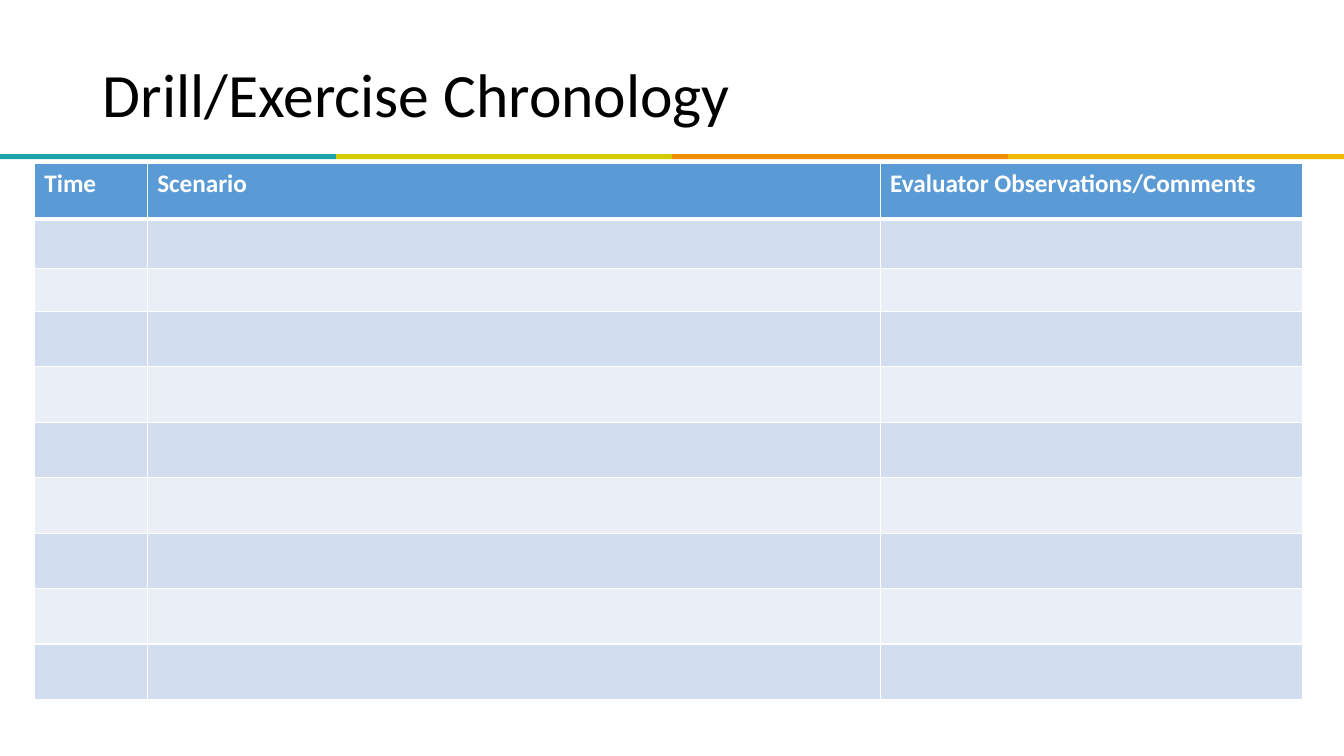
from dataclasses import dataclass

from lxml.etree import SubElement
from pptx import Presentation
from pptx.dml.color import RGBColor
from pptx.dml.fill import FillFormat
from pptx.enum.shapes import MSO_SHAPE as Shape
from pptx.enum.text import MSO_ANCHOR as Anchor, MSO_AUTO_SIZE as AutoSize, PP_ALIGN as Align
from pptx.oxml.ns import qn
from pptx.slide import Slide
from pptx.table import _Cell as Cell
from pptx.text.text import _Paragraph as Paragraph
from pptx.util import Inches, Pt

PAGE_WIDTH, PAGE_HEIGHT = 13.33, 7.5
STRIPE_COLORS = ["1BA3AB", "D3CD00", "EE8E03", "F4B900"]
HEADER_FILL = "5B9BD5"
BAND_FILLS = ["EAEFF7", "D2DEEF"]
ROW_HEIGHTS = [0.55, 0.49, 0.43] + [0.55] * 7
TITLE_FONT = {"name": "Calibri", "size": Pt(44), "bold": False}
HEADER_FONT = {"name": "Calibri", "size": Pt(18), "bold": True}


@dataclass(frozen=True)
class Column:
    heading: str
    width: float


COLUMNS = [
    Column("Time", 1.12),
    Column("Scenario", 7.27),
    Column("Evaluator Observations/Comments", 4.19),
]


def paint(fill: FillFormat, color: str) -> None:
    fill.solid()
    fill.fore_color.rgb = RGBColor.from_string(color)


def write(para: Paragraph, text: str, font: dict, color: str) -> None:
    span = para.add_run()
    span.text = text
    for name, value in font.items():
        setattr(span.font, name, value)
    paint(span.font.fill, color)


def add_stripes(page: Slide) -> None:
    width = PAGE_WIDTH / len(STRIPE_COLORS)
    for index, color in enumerate(STRIPE_COLORS):
        stripe = page.shapes.add_shape(
            Shape.RECTANGLE, Inches(index * width), Inches(1.53), Inches(width), Inches(0.05)
        )
        stripe.shadow.inherit = False
        stripe.line.fill.background()
        paint(stripe.fill, color)


def add_title(page: Slide) -> None:
    title = page.shapes.title
    box = {"left": 0.92, "top": 0.4, "width": 8.31, "height": 1.13}
    for name, value in box.items():
        setattr(title, name, Inches(value))
    frame = title.text_frame
    frame.auto_size = AutoSize.NONE
    frame.vertical_anchor = Anchor.MIDDLE
    para = frame.paragraphs[0]
    para.alignment = Align.LEFT
    para.line_spacing = 0.9
    write(para, "Drill/Exercise Chronology", TITLE_FONT, "000000")


def add_borders(cell: Cell, row: int) -> None:
    widths = {"L": 1, "R": 1, "T": 3 if row == 1 else 1, "B": 3 if row == 0 else 1}
    properties = cell._tc.get_or_add_tcPr()
    for side, width in widths.items():
        line = SubElement(properties, qn(f"a:ln{side}"), w=str(Pt(width)))
        SubElement(SubElement(line, qn("a:solidFill")), qn("a:srgbClr"), val="FFFFFF")


def add_chronology(page: Slide) -> None:
    table = page.shapes.add_table(
        len(ROW_HEIGHTS), len(COLUMNS), Inches(0.34), Inches(1.62),
        Inches(sum(column.width for column in COLUMNS)), Inches(sum(ROW_HEIGHTS)),
    ).table
    for index, column in enumerate(COLUMNS):
        table.columns[index].width = Inches(column.width)
        write(table.cell(0, index).text_frame.paragraphs[0], column.heading, HEADER_FONT, "FFFFFF")
    for row, height in enumerate(ROW_HEIGHTS):
        table.rows[row].height = Inches(height)
        for cell in table.rows[row].cells:
            add_borders(cell, row)
            paint(cell.fill, BAND_FILLS[row % 2] if row else HEADER_FILL)


def main() -> None:
    deck = Presentation()
    deck.slide_width, deck.slide_height = Inches(PAGE_WIDTH), Inches(PAGE_HEIGHT)
    page = deck.slides.add_slide(deck.slide_layouts.get_by_name("Title Only"))
    paint(page.background.fill, "FFFFFF")
    add_stripes(page)
    add_title(page)
    add_chronology(page)
    deck.save("out.pptx")


if __name__ == "__main__":
    main()
